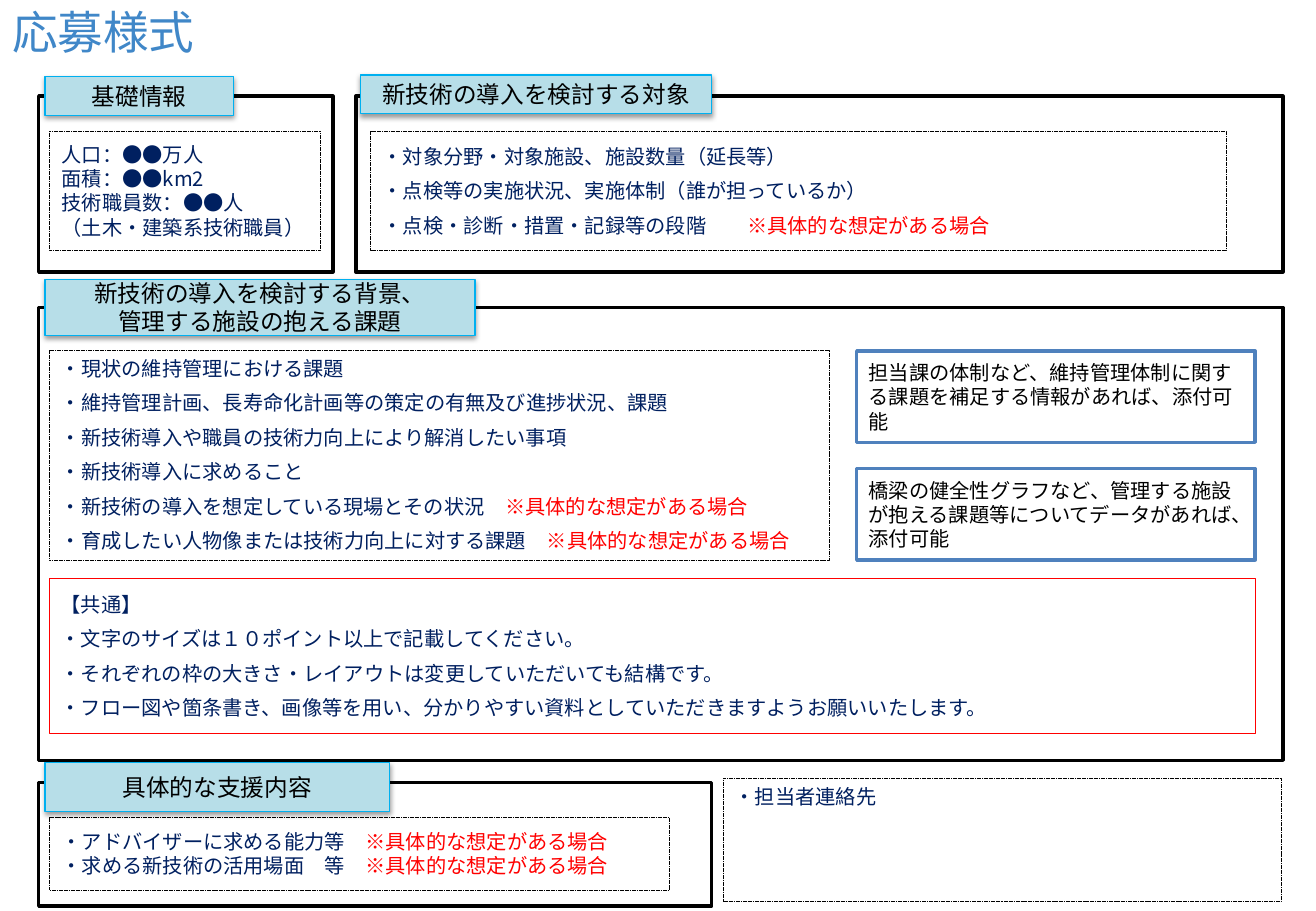
from pptx import Presentation
from pptx.util import Cm, Pt
from pptx.dml.color import RGBColor
from pptx.enum.dml import MSO_LINE
from pptx.enum.shapes import MSO_SHAPE as SHAPE
from pptx.enum.text import MSO_ANCHOR as ANCHOR, MSO_AUTO_SIZE as FIT, PP_ALIGN as ALIGN
from pptx.oxml import parse_xml
from pptx.oxml.ns import nsdecls, qn
from lxml import etree

COLORS = {"black": "000000", "white": "FFFFFF", "navy": "002060", "red": "FF0000",
          "title": "4087C8", "label": "B7DEE8", "cyan": "00B0F0", "blue": "4F81BD"}
CJK = "Noto Sans CJK JP"
HANGING = 0.41
IF_PLANNED = "※具体的な想定がある場合"


def rgb(name):
    return RGBColor.from_string(COLORS[name])


class FormSlide:
    def __init__(self, prs):
        self.slide = prs.slides.add_slide(prs.slide_layouts[1])

    def place(self, sp, box):
        sp.left, sp.top, sp.width, sp.height = (Cm(v) for v in box)

    def outline(self, sp, fill, line, width, dotted=False):
        if fill:
            sp.fill.solid()
            sp.fill.fore_color.rgb = rgb(fill)
        else:
            sp.fill.background()
        sp.line.color.rgb = rgb(line)
        sp.line.width = Pt(width)
        if dotted:
            sp.line.dash_style = MSO_LINE.SQUARE_DOT

    def rect(self, box, fill, line, width, dotted=False):
        sp = self.slide.shapes.add_shape(SHAPE.RECTANGLE, *(Cm(v) for v in box))
        sp.shadow.inherit = False
        self.outline(sp, fill, line, width, dotted)
        return sp

    def set_lines(self, sp, lines, size=12, color="navy", font=CJK, align=ALIGN.LEFT,
                  anchor=ANCHOR.MIDDLE, before=0, hanging=0, tab=None):
        """Each line is a string or a (text, red text) pair; a tab sets a gap."""
        tf = sp.text_frame
        tf.word_wrap, tf.auto_size, tf.vertical_anchor = True, FIT.NONE, anchor
        for i, line in enumerate(lines):
            p = tf.paragraphs[0] if i == 0 else tf.add_paragraph()
            parts = (line,) if isinstance(line, str) else line
            has_tab = "\t" in parts[0]
            indent = 0 if has_tab else Cm(hanging)
            pPr = p._p.get_or_add_pPr()
            pPr.set("marL", str(indent))
            pPr.set("indent", str(-indent))
            etree.SubElement(pPr, qn("a:buNone"))
            if has_tab:
                tabs = etree.SubElement(pPr, qn("a:tabLst"))
                etree.SubElement(tabs, qn("a:tab"), pos=str(Cm(tab)), algn="l")
            p.alignment = align
            p.space_before = Pt(before if i else 0)
            for text, run_color in zip(parts, (color, "red")):
                r = p.add_run()
                r.text = text
                r.font.size, r.font.name = Pt(size), font
                r.font.color.rgb = rgb(run_color)
                ea = etree.SubElement(r._r.get_or_add_rPr(), qn("a:ea"))
                ea.set("typeface", font)

    def title(self, text, box):
        sp = self.slide.shapes.title
        self.place(sp, box)
        self.set_lines(sp, [text], size=27, color="title")

    def body(self, lines, box):
        sp = self.slide.placeholders[1]
        self.place(sp, box)
        self.outline(sp, "white", "black", 0.25, dotted=True)
        self.set_lines(sp, lines, anchor=ANCHOR.TOP, before=6, hanging=HANGING)

    def frame(self, box):
        self.rect(box, None, "black", 2)

    def label(self, lines, box):
        sp = self.rect(box, "label", "cyan", 0.75)
        effects = sp._element.spPr.find(qn("a:effectLst"))
        effects.append(parse_xml(
            f'<a:outerShdw {nsdecls("a")} blurRad="{Pt(3.1)}" dist="{Pt(1.6)}" '
            'dir="5400000" rotWithShape="0"><a:srgbClr val="000000">'
            '<a:alpha val="38000"/></a:srgbClr></a:outerShdw>'))
        self.set_lines(sp, lines, size=14, color="black", align=ALIGN.CENTER)

    def entry(self, lines, box, line="black", dotted=True, **style):
        sp = self.rect(box, "white", line, 0.25, dotted)
        self.set_lines(sp, lines, hanging=HANGING, **style)

    def attachment(self, text, box):
        sp = self.rect(box, "white", "blue", 2)
        self.set_lines(sp, [text], color="black", font="Arial")


def main():
    prs = Presentation()
    prs.slide_width, prs.slide_height = Cm(27.51), Cm(19.05)
    form = FormSlide(prs)
    form.title("応募様式", (0, 0, 21.13, 1.32))

    # Background and issues
    form.body([
        "・現状の維持管理における課題",
        "・維持管理計画、長寿命化計画等の策定の有無及び進捗状況、課題",
        "・新技術導入や職員の技術力向上により解消したい事項",
        "・新技術導入に求めること",
        ("・新技術の導入を想定している現場とその状況　", IF_PLANNED),
        ("・育成したい人物像または技術力向上に対する課題　", IF_PLANNED),
    ], (1.02, 7.32, 16.31, 4.39))
    form.frame((0.81, 6.43, 26.01, 9.47))
    form.label(["新技術の導入を検討する背景、", "管理する施設の抱える課題"],
               (0.94, 5.84, 8.99, 1.17))
    attachments = [
        "担当課の体制など、維持管理体制に関する課題を補足する情報があれば、添付可能",
        "橋梁の健全性グラフなど、管理する施設が抱える課題等についてデータがあれば、添付可能",
    ]
    for i, text in enumerate(attachments):
        form.attachment(text, (17.91, 7.34 + 2.46 * i, 8.33, 1.91))

    # Common notes
    form.entry([
        "【共通】",
        "・文字のサイズは１０ポイント以上で記載してください。",
        "・それぞれの枠の大きさ・レイアウトは変更していただいても結構です。",
        "・フロー図や箇条書き、画像等を用い、分かりやすい資料としていただきますようお願いいたします。",
    ], (1.02, 12.09, 25.22, 3.25), line="red", dotted=False, before=6)

    # Basic information
    form.frame((0.81, 2.01, 6.15, 3.68))
    form.label(["基礎情報"], (0.94, 1.6, 3.94, 0.81))
    form.entry(["人口：●●万人", "面積：●●km2", "技術職員数：●●人", "（土木・建築系技術職員）"],
               (1.04, 2.74, 5.66, 2.49))

    # Target of the new technology
    form.frame((7.44, 2.01, 19.38, 3.68))
    form.label(["新技術の導入を検討する対象"], (7.54, 1.57, 7.34, 0.81))
    form.entry([
        "・対象分野・対象施設、施設数量（延長等）",
        "・点検等の実施状況、実施体制（誰が担っているか）",
        ("・点検・診断・措置・記録等の段階\t", IF_PLANNED),
    ], (7.75, 2.74, 17.88, 2.49), before=6, tab=7.6)

    # Support wanted
    form.frame((0.81, 16.36, 14.07, 2.59))
    form.entry([
        ("・アドバイザーに求める能力等\t", IF_PLANNED),
        ("・求める新技術の活用場面　等　", IF_PLANNED),
    ], (1.04, 17.09, 12.95, 1.52), tab=7.2)
    form.label(["具体的な支援内容"], (0.94, 15.95, 7.21, 1.02))

    # Contact
    form.entry(["・担当者連絡先"], (15.11, 16.28, 11.68, 2.57), anchor=ANCHOR.TOP)

    prs.save("out.pptx")


if __name__ == "__main__":
    main()
